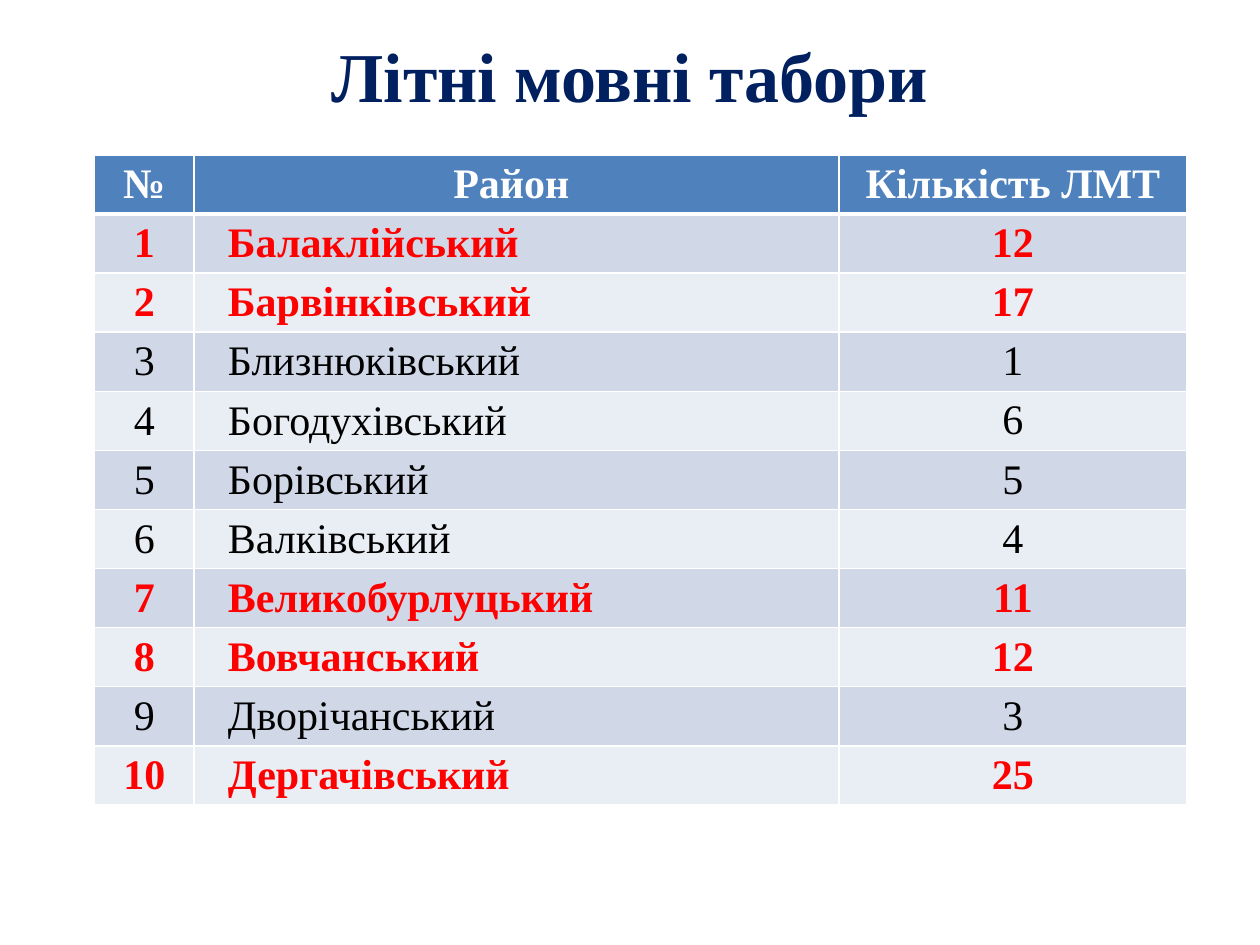
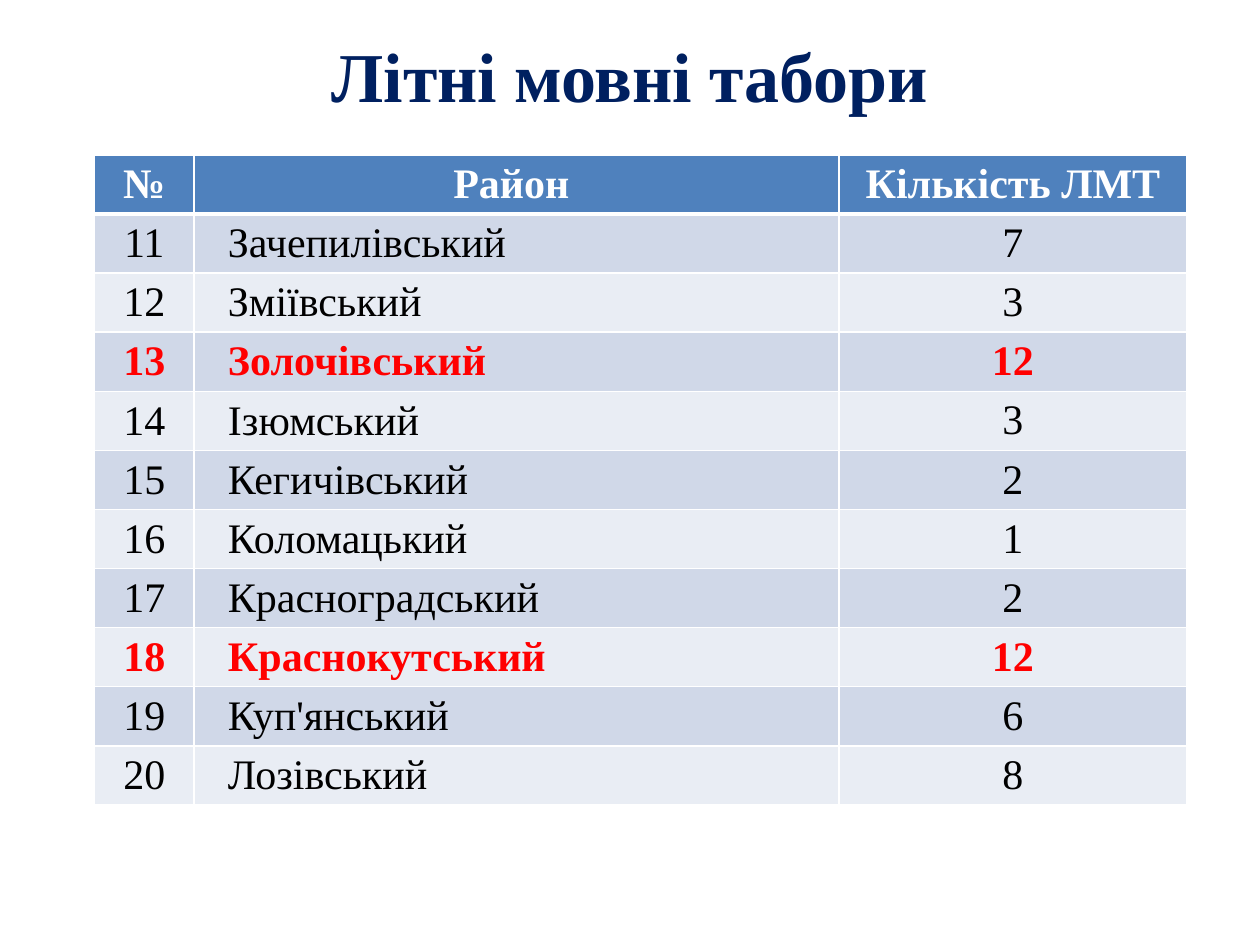
import pptx
import pptx.dml.color
import pptx.enum.text
import pptx.oxml
import pptx.oxml.ns
import pptx.util

Inches = pptx.util.Inches
Pt = pptx.util.Pt
RGBColor = pptx.dml.color.RGBColor
CENTER = pptx.enum.text.PP_ALIGN.CENTER
LEFT = pptx.enum.text.PP_ALIGN.LEFT
MIDDLE = pptx.enum.text.MSO_ANCHOR.MIDDLE

NAVY = RGBColor(0x00, 0x20, 0x60)
WHITE = RGBColor(0xFF, 0xFF, 0xFF)
BLACK = RGBColor(0x00, 0x00, 0x00)
RED = RGBColor(0xFF, 0x00, 0x00)
HEADER_BLUE = RGBColor(0x4F, 0x81, 0xBD)
BANDS = (RGBColor(0xD0, 0xD8, 0xE8), RGBColor(0xE9, 0xED, 0xF4))

FONT = "Times New Roman"
TITLE_FONT = {"name": FONT, "size": Pt(40), "bold": True}
CELL_FONT = {"name": FONT, "size": Pt(24)}
TIGHT_CELL = {
    "vertical_anchor": MIDDLE,
    "margin_left": Inches(0.07),
    "margin_right": Inches(0.07),
    "margin_top": 0,
    "margin_bottom": 0,
}

TITLE = "Літні мовні табори"
TITLE_BOX = (0, 0, 10, 1.18)
TABLE_BOX = (0.75, 1.23, 8.67, 4.51)
COLUMN_WIDTHS = (0.79, 5.12, 2.76)
HEADERS = ("№", "Район ", "Кількість ЛМТ")
MANY_CAMPS = 10
DISTRICTS = [
    ("Балаклійський", 12),
    ("Барвінківський", 17),
    ("Близнюківський", 1),
    ("Богодухівський", 6),
    ("Борівський", 5),
    ("Валківський", 4),
    ("Великобурлуцький", 11),
    ("Вовчанський", 12),
    ("Дворічанський", 3),
    ("Дергачівський", 25),
    ("Зачепилівський", 7),
    ("Зміївський", 3),
    ("Золочівський", 12),
    ("Ізюмський", 3),
    ("Кегичівський", 2),
    ("Коломацький", 1),
    ("Красноградський", 2),
    ("Краснокутський", 12),
    ("Куп'янський", 6),
    ("Лозівський", 8),
]
ROWS_PER_SLIDE = 10


def apply(obj, values):
    """Set each named attribute of an object."""
    for name, value in values.items():
        setattr(obj, name, value)


def write(tf, text, font, color, align=CENTER):
    """Write one formatted paragraph and return it."""
    p = tf.paragraphs[0]
    p.alignment = align
    r = p.add_run()
    r.text = text
    apply(r.font, font)
    r.font.color.rgb = color
    return p


def add_borders(cell, top=1, bottom=1):
    """Draw white borders of the given point widths around a cell."""
    tc_pr = cell._tc.get_or_add_tcPr()
    for side, width in (("L", 1), ("R", 1), ("T", top), ("B", bottom)):
        tc_pr.append(pptx.oxml.parse_xml(
            f'<a:ln{side} {pptx.oxml.ns.nsdecls("a")} w="{Pt(width)}">'
            f'<a:solidFill><a:srgbClr val="{WHITE}"/></a:solidFill></a:ln{side}>'))


def fill_cell(cell, text, fill, color, bold, align=CENTER, **borders):
    """Format a table cell and return its paragraph."""
    add_borders(cell, **borders)
    cell.fill.solid()
    cell.fill.fore_color.rgb = fill
    return write(cell.text_frame, text, {**CELL_FONT, "bold": bold}, color, align)


def add_title(slide, box):
    """Place and format the title placeholder in a box."""
    sp = slide.shapes.title
    apply(sp, dict(zip(("left", "top", "width", "height"), map(Inches, box))))
    sp.text_frame.vertical_anchor = MIDDLE
    write(sp.text_frame, TITLE, TITLE_FONT, NAVY)


def add_camp_table(slide, box, districts, first_number):
    """Place a table of numbered districts and their camp counts in a box."""
    n_rows = len(districts) + 1
    table = slide.shapes.add_table(
        n_rows, len(HEADERS), *map(Inches, box)).table
    for column, width in zip(table.columns, COLUMN_WIDTHS):
        column.width = Inches(width)
    for row in table.rows:
        row.height = Inches(box[3] / n_rows)
    for col, header in enumerate(HEADERS):
        fill_cell(table.cell(0, col), header, HEADER_BLUE, WHITE, True, bottom=3)
    for i, (district, count) in enumerate(districts):
        many = count > MANY_CAMPS
        for col, value in enumerate((first_number + i, district, count)):
            cell = table.cell(i + 1, col)
            is_name = col == 1
            p = fill_cell(cell, str(value), BANDS[i % 2], RED if many else BLACK,
                          many, LEFT if is_name else CENTER, top=1 if i else 3)
            if is_name:
                p._p.get_or_add_pPr().set("indent", str(Inches(0.2)))
            if col < 2:
                apply(cell, TIGHT_CELL)


def add_camp_slide(prs, start):
    """Add a slide listing the districts from a starting index."""
    slide = prs.slides.add_slide(prs.slide_layouts[5])
    add_title(slide, TITLE_BOX)
    add_camp_table(slide, TABLE_BOX,
                   DISTRICTS[start:start + ROWS_PER_SLIDE], start + 1)


def main():
    """Build and save the presentation."""
    prs = pptx.Presentation()
    prs.slide_width, prs.slide_height = Inches(10), Inches(7.5)
    for start in range(0, len(DISTRICTS), ROWS_PER_SLIDE):
        add_camp_slide(prs, start)
    prs.save("out.pptx")


if __name__ == "__main__":
    main()
